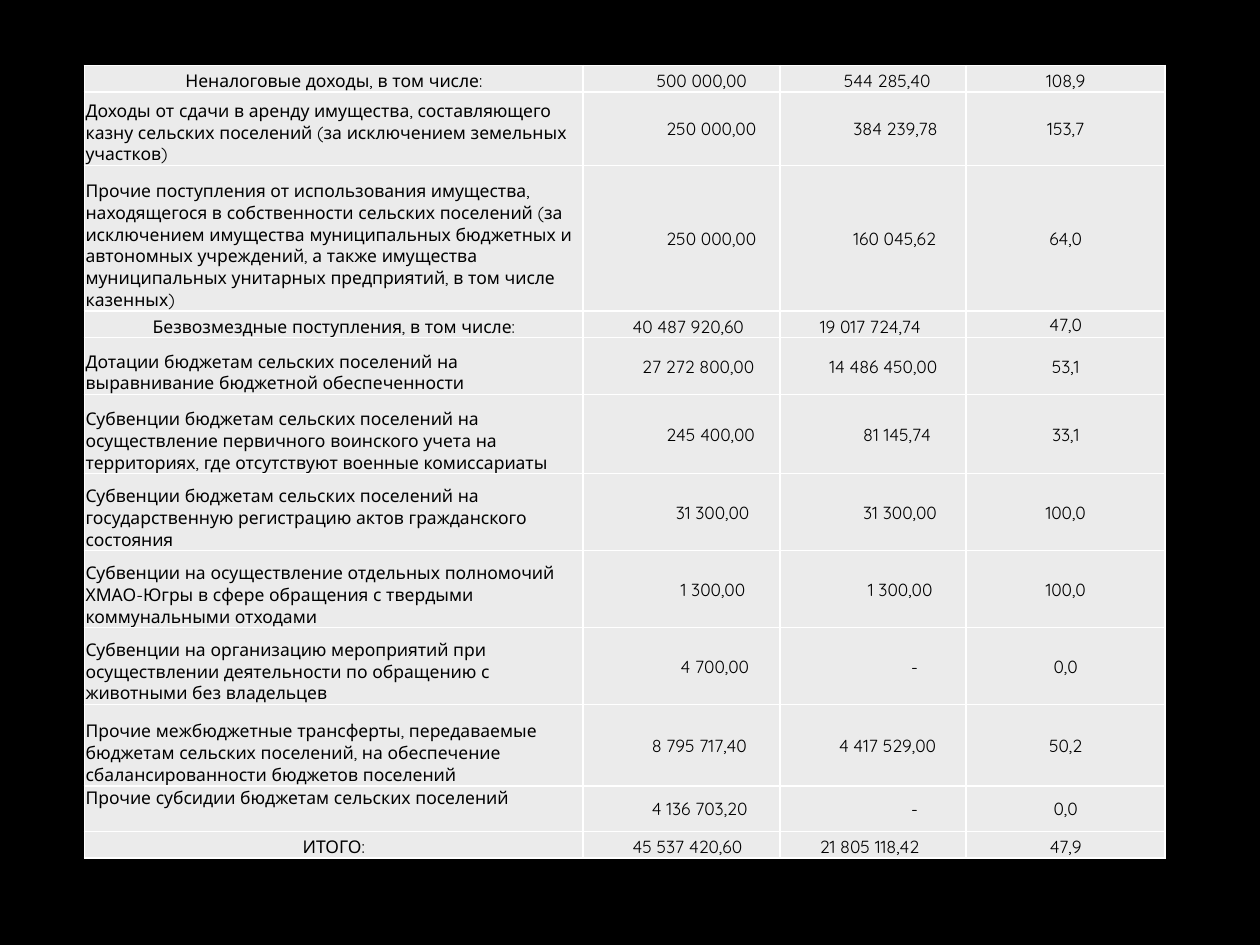
from lxml import etree
from pptx import Presentation
from pptx.dml.color import RGBColor
from pptx.enum.text import MSO_ANCHOR, PP_ALIGN
from pptx.oxml.ns import qn
from pptx.util import Pt

TOP, MIDDLE, BOTTOM = MSO_ANCHOR.TOP, MSO_ANCHOR.MIDDLE, MSO_ANCHOR.BOTTOM
LEFT, CENTER = PP_ALIGN.LEFT, PP_ALIGN.CENTER

COLORS = {"background": "000000", "cell": "EBEBEB", "text": "000000", "border": "FFFFFF"}
FONT = {"name": "Quicksand", "size": Pt(10)}
INSETS = {"margin_left": Pt(0.72), "margin_top": Pt(0.72), "margin_right": Pt(0.72), "margin_bottom": 0}
BORDER_WIDTH = Pt(1)
TABLE_LEFT, TABLE_TOP = 48.2, 37.5
COLUMN_WIDTHS = [285.1, 112.5, 106.3, 113.8]

# Label, plan, actual, percent
ROWS = [
    ("Неналоговые доходы, в том числе:", "500 000,00", "544 285,40", "108,9"),
    ("Доходы от сдачи в аренду имущества, составляющего казну сельских поселений "
     "(за исключением земельных участков)", "250 000,00", "384 239,78", "153,7"),
    ("Прочие поступления от использования имущества, находящегося в собственности "
     "сельских поселений (за исключением имущества муниципальных бюджетных и автономных "
     "учреждений, а также имущества муниципальных унитарных предприятий, в том числе "
     "казенных)", "250 000,00", "160 045,62", "64,0"),
    ("Безвозмездные поступления, в том числе:", "40 487 920,60", "19 017 724,74", "47,0"),
    ("Дотации бюджетам сельских поселений на выравнивание бюджетной обеспеченности",
     "27 272 800,00", "14 486 450,00", "53,1"),
    ("Субвенции бюджетам сельских поселений на осуществление первичного воинского учета "
     "на территориях, где отсутствуют военные комиссариаты", "245 400,00", "81 145,74", "33,1"),
    ("Субвенции бюджетам сельских поселений на государственную регистрацию актов "
     "гражданского состояния", "31 300,00", "31 300,00", "100,0"),
    ("Субвенции на осуществление отдельных полномочий ХМАО-Югры в сфере обращения "
     "с твердыми коммунальными отходами", "1 300,00", "1 300,00", "100,0"),
    ("Субвенции на организацию мероприятий при осуществлении деятельности по обращению "
     "с животными без владельцев", "4 700,00", "-", "0,0"),
    ("Прочие межбюджетные трансферты, передаваемые бюджетам сельских поселений, "
     "на обеспечение сбалансированности бюджетов поселений",
     "8 795 717,40", "4 417 529,00", "50,2"),
    ("Прочие субсидии бюджетам сельских поселений", "4 136 703,20", "-", "0,0"),
    ("ИТОГО:", "45 537 420,60", "21 805 118,42", "47,9"),
]
ROW_HEIGHTS = [15.2, 41.8, 83.2, 15.2, 32.5, 45.2, 44, 44, 44, 46.5, 26.2, 15.2]
SUMMARY_ROWS = {0, 3, 11}
ANCHOR_EXCEPTIONS = {(3, 3): MIDDLE, (10, 0): TOP}
# Left indents of the amounts, by column
AMOUNT_INDENTS = {
    1: [41.2, 46.8, 46.8, 27.5, 33, 46.8, 52.2, 55, 55, 38.5, 38.5, 27.5],
    2: [35.8, 41.2, 41.2, 22, 27.5, 46.8, 46.8, 49.5, 74.2, 33, 74.2, 22],
}


def set_attributes(target, values):
    for name, value in values.items():
        setattr(target, name, value)


def add_borders(cell):
    properties = cell._tc.get_or_add_tcPr()
    for position, side in enumerate(("lnL", "lnR", "lnT", "lnB")):
        line = etree.Element(qn(f"a:{side}"), w=str(BORDER_WIDTH))
        fill = etree.SubElement(line, qn("a:solidFill"))
        etree.SubElement(fill, qn("a:srgbClr"), val=COLORS["border"])
        properties.insert(position, line)


def cell_layout(row, column):
    """Return the anchor and the paragraph alignment of a cell."""
    summary = row in SUMMARY_ROWS
    anchor = BOTTOM if summary or column == 0 else MIDDLE
    centered = column == 3 or (summary and column == 0)
    return ANCHOR_EXCEPTIONS.get((row, column), anchor), CENTER if centered else LEFT


def fill_cell(cell, row, column, text):
    anchor, alignment = cell_layout(row, column)
    set_attributes(cell, {**INSETS, "text": text, "vertical_anchor": anchor})
    if column in AMOUNT_INDENTS:
        cell.margin_left += Pt(AMOUNT_INDENTS[column][row])
    cell.fill.solid()
    cell.fill.fore_color.rgb = RGBColor.from_string(COLORS["cell"])
    paragraph = cell.text_frame.paragraphs[0]
    paragraph.alignment = alignment
    font = paragraph.runs[0].font
    set_attributes(font, FONT)
    font.color.rgb = RGBColor.from_string(COLORS["text"])
    add_borders(cell)


def main():
    presentation = Presentation()
    presentation.slide_width, presentation.slide_height = Pt(720), Pt(540)
    slide = presentation.slides.add_slide(presentation.slide_layouts[6])
    background = slide.background.fill
    background.solid()
    background.fore_color.rgb = RGBColor.from_string(COLORS["background"])

    table = slide.shapes.add_table(
        len(ROWS), len(COLUMN_WIDTHS), Pt(TABLE_LEFT), Pt(TABLE_TOP),
        Pt(sum(COLUMN_WIDTHS)), Pt(sum(ROW_HEIGHTS))).table
    set_attributes(table, {"first_row": False, "horz_banding": False})
    for column, width in zip(table.columns, COLUMN_WIDTHS):
        column.width = Pt(width)
    for row, height in zip(table.rows, ROW_HEIGHTS):
        row.height = Pt(height)
    for row, texts in enumerate(ROWS):
        for column, text in enumerate(texts):
            fill_cell(table.cell(row, column), row, column, text)
    presentation.save("out.pptx")


if __name__ == "__main__":
    main()
